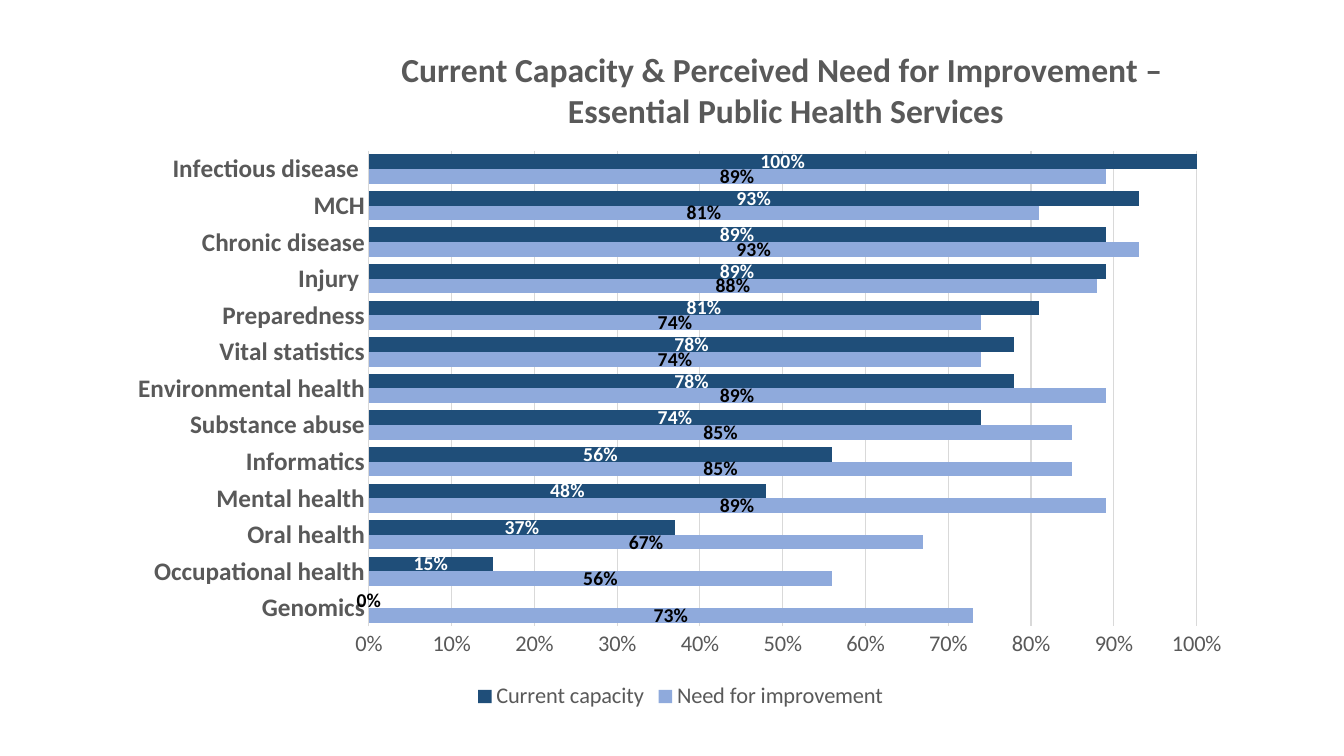
from lxml.etree import SubElement
from pptx import Presentation
from pptx.chart.data import CategoryChartData
from pptx.dml.color import RGBColor
from pptx.enum.chart import XL_CHART_TYPE, XL_LABEL_POSITION, XL_LEGEND_POSITION, XL_TICK_MARK
from pptx.oxml.ns import qn
from pptx.util import Inches, Pt

COLORS = {
    "need": "8FAADC",
    "capacity": "1F4E79",
    "text": "595959",
    "grid": "D9D9D9",
    "black": "000000",
    "white": "FFFFFF",
}
TITLE = ["Current Capacity & Perceived Need for Improvement – ", "Essential Public Health Services"]
SERVICES = [
    ("Genomics", 0.73, 0),
    ("Occupational health", 0.56, 0.15),
    ("Oral health", 0.67, 0.37),
    ("Mental health", 0.89, 0.48),
    ("Informatics", 0.85, 0.56),
    ("Substance abuse", 0.85, 0.74),
    ("Environmental health", 0.89, 0.78),
    ("Vital statistics", 0.74, 0.78),
    ("Preparedness", 0.74, 0.81),
    ("Injury ", 0.88, 0.89),
    ("Chronic disease", 0.93, 0.89),
    ("MCH", 0.81, 0.93),
    ("Infectious disease ", 0.89, 1),
]


def color(name):
    return RGBColor.from_string(COLORS[name])


def format_font(font, size=16, bold=False, fill="text", name="Calibri"):
    font.name = name
    font.size = Pt(size)
    font.bold = bold
    font.color.rgb = color(fill)


def write(text_frame, lines, **style):
    text_frame.text = "\n".join(lines)
    for paragraph in text_frame.paragraphs:
        format_font(paragraph.font, **style)
        for run in paragraph.runs:
            format_font(run.font, **style)


def place(parent, index, **fractions):
    for old_layout in parent.findall(qn("c:layout")):
        parent.remove(old_layout)
    layout = SubElement(parent, qn("c:layout"))
    parent.insert(index, layout)
    manual = SubElement(layout, qn("c:manualLayout"))
    if "w" in fractions:
        SubElement(manual, qn("c:layoutTarget")).set("val", "inner")
    for key in ("x", "y"):
        SubElement(manual, qn(f"c:{key}Mode")).set("val", "edge")
    for key, fraction in fractions.items():
        SubElement(manual, qn(f"c:{key}")).set("val", str(fraction))


class SlideBuilder:
    def __init__(self, presentation):
        self.slide = presentation.slides.add_slide(presentation.slide_layouts[6])

    def bar_chart(self, left, top, width, height):
        data = CategoryChartData(number_format="0%")
        names, need, capacity = zip(*SERVICES)
        data.categories = names
        data.add_series("Need for improvement", need)
        data.add_series("Current capacity", capacity)
        frame = self.slide.shapes.add_chart(
            XL_CHART_TYPE.BAR_CLUSTERED, Inches(left), Inches(top), Inches(width), Inches(height), data
        )
        chart = frame.chart
        format_font(chart.font, size=10, fill="black")
        plot = chart.plots[0]
        plot.vary_by_categories = False
        plot.gap_width = 50
        plot.overlap = 0
        place(plot._element.getparent(), 0, x=0.224, y=0.182, w=0.733, h=0.69)
        return chart

    def title(self, chart, lines):
        chart.has_title = True
        write(chart.chart_title.text_frame, lines, size=24, bold=True)
        chart.chart_title.include_in_layout = False
        place(chart.chart_title._element, 1, x=0.25, y=0.03)

    def axes(self, chart):
        for axis in (chart.category_axis, chart.value_axis):
            axis.major_tick_mark = axis.minor_tick_mark = XL_TICK_MARK.NONE
        format_font(chart.category_axis.tick_labels.font, size=18, bold=True)
        format_font(chart.value_axis.tick_labels.font)
        chart.value_axis.minimum_scale = 0
        chart.value_axis.maximum_scale = 1
        chart.value_axis.major_unit = 0.1
        chart.value_axis.tick_labels.number_format = "0%"
        chart.value_axis.tick_labels.number_format_is_linked = False
        chart.value_axis.format.line.fill.background()
        for line in (chart.category_axis.format.line, chart.value_axis.major_gridlines.format.line):
            line.color.rgb = color("grid")
            line.width = Pt(0.75)
        chart.category_axis.has_major_gridlines = False

    def series(self, series, fill, label_fill):
        series.format.fill.solid()
        series.format.fill.fore_color.rgb = color(fill)
        series.invert_if_negative = False
        labels = series.data_labels
        labels.show_value = True
        labels.number_format = "0%"
        labels.number_format_is_linked = False
        labels.position = XL_LABEL_POSITION.CENTER
        format_font(labels.font, size=14, bold=True, fill=label_fill)

    def point_label(self, point, fill):
        format_font(point.data_label.font, size=14, bold=True, fill=fill)
        point.data_label.position = XL_LABEL_POSITION.CENTER

    def legend(self, chart):
        chart.has_legend = True
        chart.legend.position = XL_LEGEND_POSITION.BOTTOM
        chart.legend.include_in_layout = False
        format_font(chart.legend.font)


def main():
    presentation = Presentation()
    presentation.slide_width = Inches(13.33)
    presentation.slide_height = Inches(7.5)
    builder = SlideBuilder(presentation)
    chart = builder.bar_chart(1.15, 0.25, 11.2, 6.84)
    builder.title(chart, TITLE)
    builder.axes(chart)
    need, capacity = chart.plots[0].series
    builder.series(need, "need", "black")
    builder.series(capacity, "capacity", "white")
    builder.point_label(capacity.points[0], "black")
    builder.legend(chart)
    presentation.save("out.pptx")


if __name__ == "__main__":
    main()
